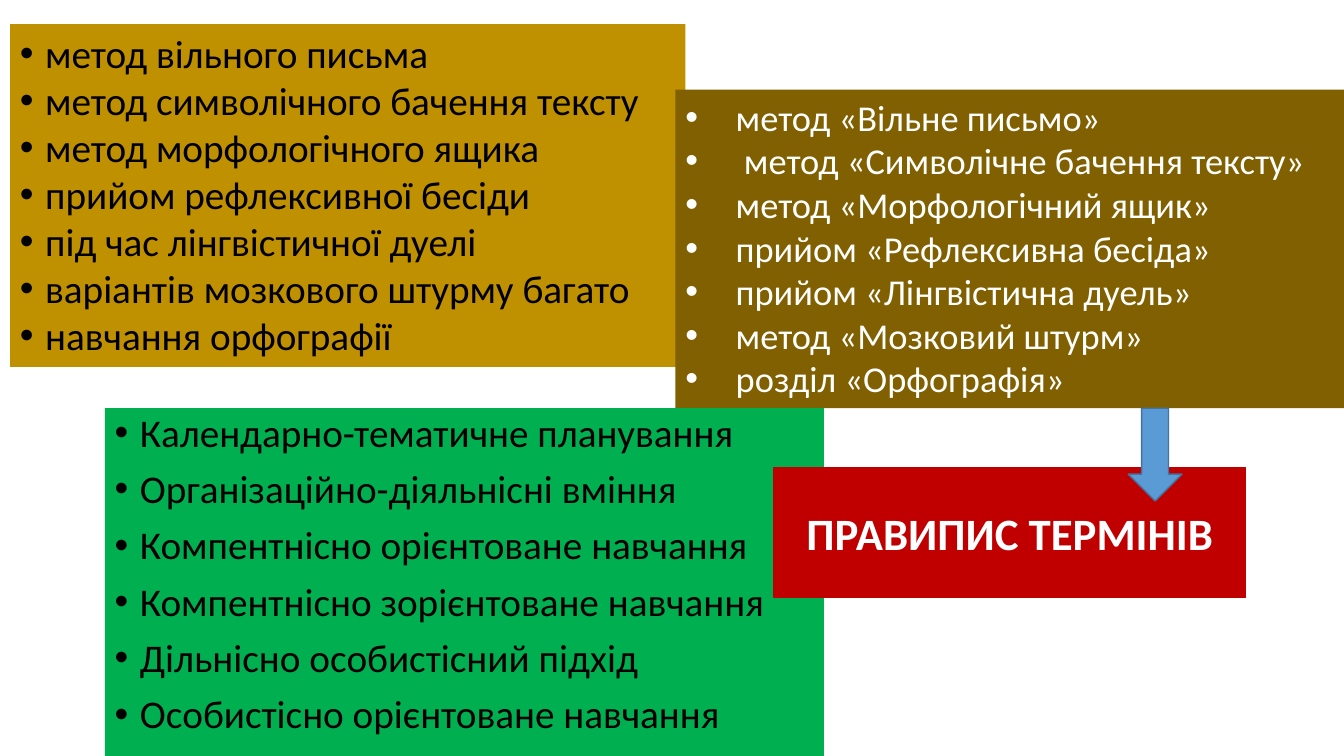
"""Build a slide on spelling the names of teaching methods."""
from dataclasses import dataclass

import lxml.etree
import pptx
import pptx.dml.color
import pptx.enum.shapes
import pptx.enum.text
import pptx.oxml.ns
import pptx.util


@dataclass(frozen=True)
class Theme:
    font: str = "Calibri"
    gold: str = "BF9000"
    brown: str = "806000"
    green: str = "00B050"
    red: str = "C00000"
    blue: str = "5B9BD5"
    navy: str = "43739E"
    black: str = "000000"
    white: str = "FFFFFF"
    list_size: int = 28
    compact_size: int = 26
    title_size: int = 32


THEME = Theme()
SLIDE_WIDTH, SLIDE_HEIGHT = 13.33, 7.5
LISTS_BOTTOM = 54

PHRASES = [
    "метод вільного письма",
    "метод символічного бачення тексту",
    "метод морфологічного ящика",
    "прийом рефлексивної бесіди",
    "під час лінгвістичної дуелі",
    "варіантів мозкового штурму багато",
    "навчання орфографії",
]
NAMES = [
    "метод «Вільне письмо»",
    " метод «Символічне бачення тексту»",
    "метод «Морфологічний ящик»",
    "прийом «Рефлексивна бесіда»",
    "прийом «Лінгвістична дуель»",
    "метод «Мозковий штурм»",
    "розділ «Орфографія»",
]
TERMS = [
    "Календарно-тематичне планування",
    "Організаційно-діяльнісні вміння",
    "Компентнісно орієнтоване навчання",
    "Компентнісно зорієнтоване навчання",
    "Дільнісно особистісний підхід",
    "Особистісно орієнтоване навчання",
]
TITLE = "ПРАВИПИС ТЕРМІНІВ"

# Each area is left, top, width, height in percent of the slide.
PANELS = [
    dict(area=(0.75, 3.2, 50.25, 45.33), fill=THEME.gold, lines=PHRASES,
         size=THEME.list_size, color=THEME.black, indent=0.25),
    dict(area=(50.25, 11.87, 49.75, 42.13), fill=THEME.brown, lines=NAMES,
         size=THEME.compact_size, color=THEME.white, indent=0.5),
    dict(area=(7.8, LISTS_BOTTOM, 53.5, 46), fill=THEME.green, lines=TERMS,
         size=THEME.list_size, color=THEME.black, indent=0.25,
         line_spacing=0.9, space_before=10),
]
TITLE_AREA = (57.6, 61.87, 35.1, 17.2)
ARROW_AREA = (83.95, LISTS_BOTTOM, 4, 12.27)


def rgb(value):
    return pptx.dml.color.RGBColor.from_string(value)


def add_block(page, kind, area, fill, line=None):
    sides = (SLIDE_WIDTH, SLIDE_HEIGHT) * 2
    box = page.shapes.add_shape(
        kind, *(pptx.util.Inches(share * side / 100) for share, side in zip(area, sides)))
    box.shadow.inherit = False
    box.fill.solid()
    box.fill.fore_color.rgb = rgb(fill)
    if line:
        box.line.color.rgb = rgb(line)
        box.line.width = pptx.util.Pt(1)
    else:
        box.line.fill.background()
    return box


def style_font(para, size, color, bold=False):
    para.font.name = THEME.font
    para.font.size = pptx.util.Pt(size)
    para.font.color.rgb = rgb(color)
    para.font.bold = bold


def add_bullet(para, indent):
    properties = para._p.get_or_add_pPr()
    properties.set("marL", str(pptx.util.Inches(indent)))
    properties.set("indent", str(pptx.util.Inches(-indent)))
    for tag, name, value in (("a:buFont", "typeface", "Arial"), ("a:buChar", "char", "•")):
        lxml.etree.SubElement(properties, pptx.oxml.ns.qn(tag)).set(name, value)


def add_panel(page, area, fill, lines, size, color, indent, line_spacing=1.0, space_before=0):
    box = add_block(page, pptx.enum.shapes.MSO_SHAPE.RECTANGLE, area, fill)
    frame = box.text_frame
    frame.word_wrap = True
    frame.vertical_anchor = pptx.enum.text.MSO_ANCHOR.TOP
    frame.text = "\n".join(lines)
    for para in frame.paragraphs:
        add_bullet(para, indent)
        para.alignment = pptx.enum.text.PP_ALIGN.LEFT
        para.line_spacing = line_spacing
        para.space_before = pptx.util.Pt(space_before)
        style_font(para, size, color)


def add_title(page):
    box = add_block(page, pptx.enum.shapes.MSO_SHAPE.RECTANGLE, TITLE_AREA, THEME.red, THEME.red)
    frame = box.text_frame
    frame.word_wrap = True
    frame.vertical_anchor = pptx.enum.text.MSO_ANCHOR.MIDDLE
    frame.text = TITLE
    para = frame.paragraphs[0]
    para.alignment = pptx.enum.text.PP_ALIGN.CENTER
    style_font(para, THEME.title_size, THEME.white, bold=True)


def main():
    deck = pptx.Presentation()
    deck.slide_width = pptx.util.Inches(SLIDE_WIDTH)
    deck.slide_height = pptx.util.Inches(SLIDE_HEIGHT)
    page = deck.slides.add_slide(deck.slide_layouts[6])
    for panel in PANELS:
        add_panel(page, **panel)
    add_title(page)
    add_block(page, pptx.enum.shapes.MSO_SHAPE.DOWN_ARROW, ARROW_AREA, THEME.blue, THEME.navy)
    deck.save("out.pptx")


if __name__ == "__main__":
    main()
